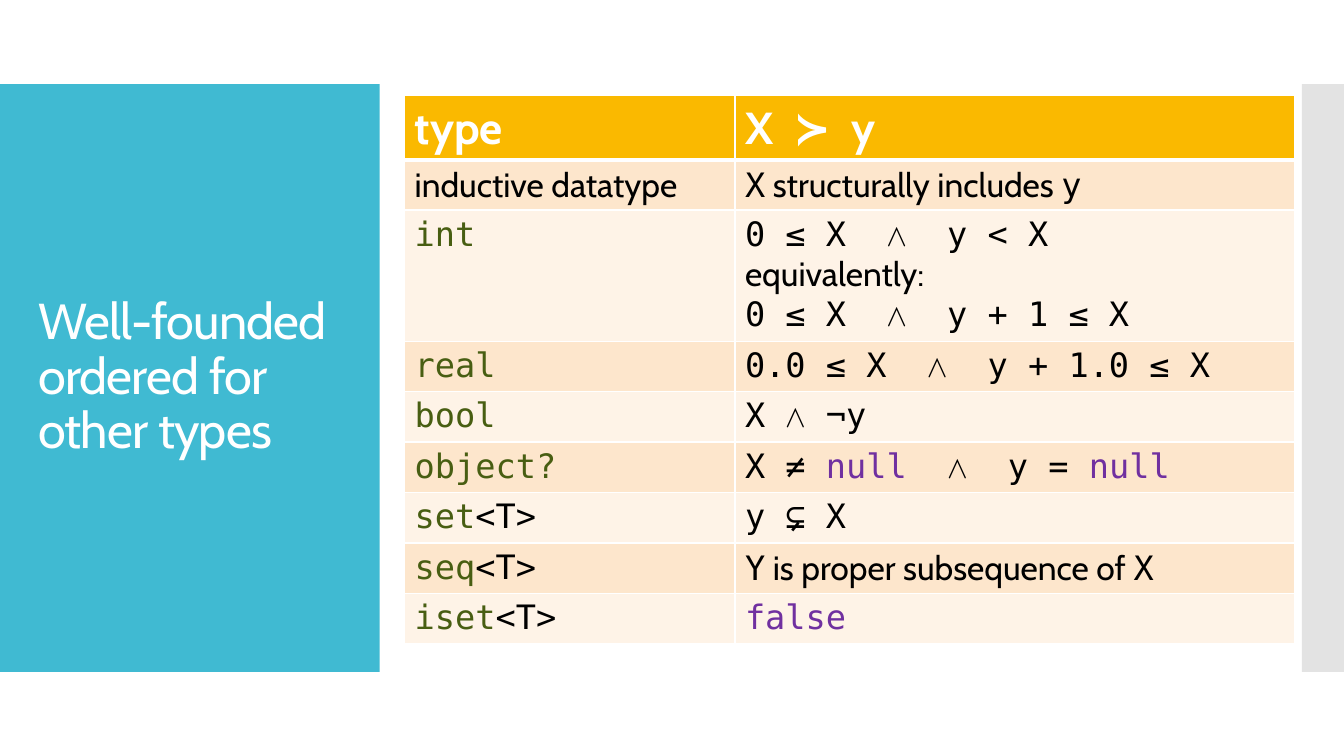
import pptx
import pptx.dml.color
import pptx.enum.shapes
import pptx.enum.text
import pptx.oxml.ns
import pptx.oxml.xmlchemy
import pptx.util

Pt = pptx.util.Pt
qn = pptx.oxml.ns.qn
new_element = pptx.oxml.xmlchemy.OxmlElement


def rgb(value):
    return pptx.dml.color.RGBColor.from_string(value)


class Theme:
    panel = "40BAD2"
    edge = "C8C8C8"
    header = "FAB900"
    bands = ("FDE6CC", "FEF3E7")
    rule = "FFFFFF"
    text_font = "Cabin"
    code_font = "DejaVu Sans Mono"
    # Font attributes of each kind of run
    title = {"name": text_font, "size": Pt(36), "color": "FFFFFF"}
    head = {"name": text_font, "size": Pt(32), "bold": True, "color": "FFFFFF"}
    prose = {"name": text_font, "size": Pt(24), "bold": False, "color": "000000"}
    code = {**prose, "name": code_font}
    type_name = {**code, "color": "485E12"}
    literal = {**code, "color": "7030A0"}


T = Theme

# Each row: runs of the type cell, runs of the ordering cell
ORDERINGS = [
    ([("type", T.head)], [("X  ≻  y", T.head)]),
    ([("inductive datatype", T.prose)],
     [("X", T.code), (" structurally includes ", T.prose), ("y", T.code)]),
    ([("int", T.type_name)],
     [("0 ≤ X  ⋀  y < X\n", T.code), ("equivalently:\n", T.prose),
      ("0 ≤ X  ⋀  y + 1 ≤ X", T.code)]),
    ([("real", T.type_name)], [("0.0 ≤ X  ⋀  y + 1.0 ≤ X", T.code)]),
    ([("bool", T.type_name)], [("X ⋀ ¬y", T.code)]),
    ([("object?", T.type_name)],
     [("X ≠ ", T.code), ("null", T.literal), ("  ⋀  y = ", T.code),
      ("null", T.literal)]),
    ([("set", T.type_name), ("<T>", T.code)], [("y ⊊ X", T.code)]),
    ([("seq", T.type_name), ("<T>", T.code)],
     [("Y", T.code), (" is proper subsequence of ", T.prose), ("X", T.code)]),
    ([("iset", T.type_name), ("<T>", T.code)], [("false", T.literal)]),
]


def add_run(paragraph, text, style):
    run = paragraph.add_run()
    run.text = text.rstrip("\n")
    for key, value in style.items():
        if key == "color":
            run.font.color.rgb = rgb(value)
        else:
            setattr(run.font, key, value)
    if text.endswith("\n"):
        paragraph.add_line_break()
    return run


def add_block(slide, box, color, opacity=100):
    block = slide.shapes.add_shape(
        pptx.enum.shapes.MSO_SHAPE.RECTANGLE, *map(Pt, box))
    block.shadow.inherit = False
    block.line.fill.background()
    block.fill.solid()
    block.fill.fore_color.rgb = rgb(color)
    if opacity < 100:
        swatch = block._element.spPr.find(qn("a:solidFill")).find(qn("a:srgbClr"))
        alpha = new_element("a:alpha")
        alpha.set("val", str(opacity * 1000))
        swatch.append(alpha)


def title_panel(slide, box, text):
    left, top, width, height = box
    add_block(slide, box, T.panel)
    inset = (left + 20.2, top + 28.8, width - 39.6, height - 57.6)
    heading = slide.shapes.add_textbox(*map(Pt, inset)).text_frame
    heading.word_wrap = True
    heading.vertical_anchor = pptx.enum.text.MSO_ANCHOR.MIDDLE
    paragraph = heading.paragraphs[0]
    paragraph.line_spacing = 0.9
    run = add_run(paragraph, text, T.title)
    run._r.get_or_add_rPr().set("spc", "-60")


def set_borders(cell, widths):
    properties = cell._tc.get_or_add_tcPr()
    for side, points in widths.items():
        line = new_element("a:ln" + side)
        line.set("w", str(int(Pt(points))))
        fill = new_element("a:solidFill")
        color = new_element("a:srgbClr")
        color.set("val", T.rule)
        fill.append(color)
        line.append(fill)
        properties.append(line)


def ordering_table(slide, box, type_width):
    width = box[2]
    table = slide.shapes.add_table(len(ORDERINGS), 2, *map(Pt, box)).table
    for column, column_width in zip(table.columns, (type_width, width - type_width)):
        column.width = Pt(column_width)
    for index, (row, contents) in enumerate(zip(table.rows, ORDERINGS)):
        row.height = Pt(29.5)  # minimum; rows grow with their text
        is_header = index == 0
        # The rule under the header is thicker, on both sides of the edge
        widths = {"L": 1, "R": 1, "T": 3 if index == 1 else 1,
                  "B": 3 if is_header else 1}
        for cell, runs in zip(row.cells, contents):
            set_borders(cell, widths)
            cell.fill.solid()
            cell.fill.fore_color.rgb = rgb(
                T.header if is_header else T.bands[(index - 1) % 2])
            for text, style in runs:
                add_run(cell.text_frame.paragraphs[0], text, style)


def main():
    deck = pptx.Presentation()
    deck.slide_width, deck.slide_height = Pt(960), Pt(540)
    slide = deck.slides.add_slide(deck.slide_layouts[6])

    # Left title panel and right edge strip share one band
    band_top, band_height = 60, 420
    title_panel(slide, (0, band_top, 271.2, band_height),
                "Well-founded ordered for other types")
    add_block(slide, (930, band_top, 30, band_height), T.edge, opacity=50)

    # Table of orderings
    ordering_table(slide, (289, 68.4, 635.5, 391), type_width=236)

    deck.save("out.pptx")


if __name__ == "__main__":
    main()
